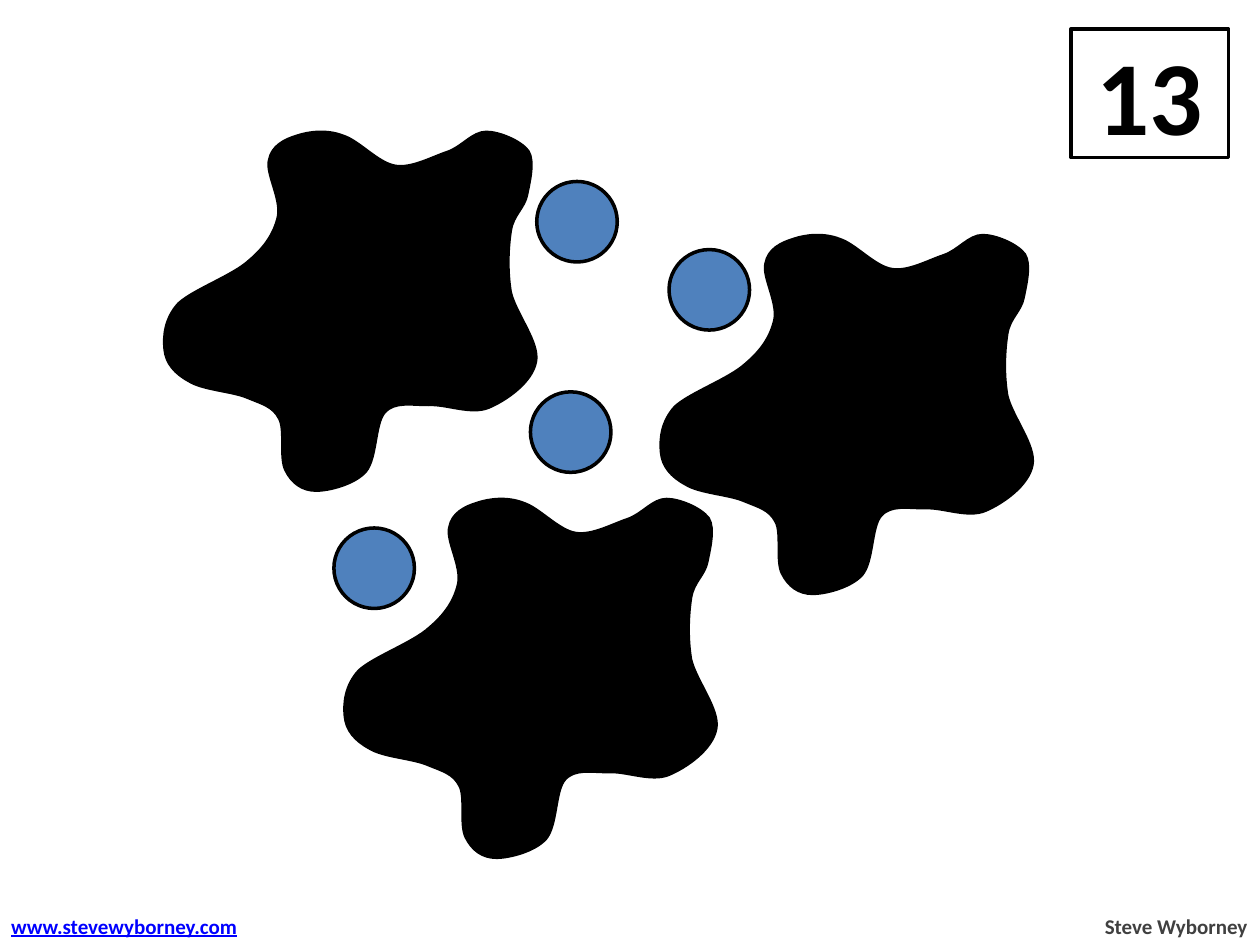
from lxml.etree import SubElement
from pptx import Presentation
from pptx.dml.color import RGBColor
from pptx.enum.shapes import MSO_SHAPE as SHAPE
from pptx.enum.text import MSO_ANCHOR as ANCHOR, MSO_AUTO_SIZE as AUTO, PP_ALIGN as ALIGN
from pptx.oxml.ns import qn
from pptx.util import Pt

NUMBER = "13"
AUTHOR = "Steve Wyborney"
SITE = "www.stevewyborney.com"

DOT_SIZE = 46
DOTS = [(382.3, 142.6), (306.7, 103.7), (303.1, 223.9), (190.8, 301.7)]

BLOBS = [(93.6, 75.6), (196.6, 285.4), (377.3, 134.6)]
BLOB_UNIT = Pt(0.72)
BLOB_START = (20, 197)
BLOB_CURVES = [
    ((9, 191), (2, 183), (1, 172)),
    ((0, 162), (1, 148), (12, 136)),
    ((24, 125), (55, 114), (68, 102)),
    ((81, 91), (88, 80), (91, 67)),
    ((94, 53), (81, 32), (84, 22)),
    ((86, 11), (96, 6), (106, 3)),
    ((115, 0), (129, -2), (142, 3)),
    ((155, 7), (170, 25), (184, 27)),
    ((197, 29), (213, 20), (225, 16)),
    ((237, 12), (245, 0), (256, 0)),
    ((266, 0), (283, 7), (289, 15)),
    ((294, 23), (290, 39), (288, 49)),
    ((286, 60), (277, 65), (275, 78)),
    ((273, 91), (272, 109), (275, 127)),
    ((279, 144), (298, 167), (295, 182)),
    ((292, 198), (272, 212), (258, 218)),
    ((244, 224), (224, 215), (210, 216)),
    ((196, 216), (183, 213), (175, 222)),
    ((167, 231), (169, 258), (160, 269)),
    ((151, 279), (131, 284), (121, 284)),
    ((110, 284), (102, 278), (97, 268)),
    ((92, 258), (97, 236), (92, 227)),
    ((87, 217), (78, 215), (66, 210)),
    ((54, 205), (31, 204), (20, 197)),
]


def color(value):
    return RGBColor.from_string(value)


def paint(sp, fill):
    sp.shadow.inherit = False
    sp.fill.solid()
    sp.fill.fore_color.rgb = color(fill)
    sp.line.color.rgb = color("000000")
    sp.line.width = Pt(2)


def write(sp, text, *, size, ink, align=ALIGN.LEFT, underline=None):
    p = sp.text_frame.paragraphs[0]
    p.alignment = align
    r = p.add_run()
    r.text = text
    r.font.name = "Calibri"
    r.font.size = Pt(size)
    r.font.bold = True
    r.font.underline = underline
    r.font.color.rgb = color(ink)


def add_label(s, text, left, width, **style):
    sp = s.shapes.add_textbox(Pt(left), Pt(518.2), Pt(width), Pt(21.8))
    sp.text_frame.word_wrap = False
    sp.text_frame.auto_size = AUTO.SHAPE_TO_FIT_TEXT
    write(sp, text, size=12, **style)


def turn(point):
    x, y = point
    return -y, x


def curve_outline(sp):
    outline = sp._element.find(".//" + qn("a:path"))
    lines = outline.findall(qn("a:lnTo"))
    for i in range(0, len(lines), 3):
        curve = SubElement(outline, qn("a:cubicBezTo"))
        lines[i].addprevious(curve)
        for line in lines[i:i + 3]:
            curve.append(line[0])
            outline.remove(line)


def add_blob(s, left, top):
    points = [point for curve in BLOB_CURVES for point in curve]
    builder = s.shapes.build_freeform(*turn(BLOB_START), scale=BLOB_UNIT)
    builder.add_line_segments([turn(point) for point in points], close=True)
    sp = builder.convert_to_shape()
    curve_outline(sp)
    xs, ys = zip(*points)
    center_x = Pt(left) + (min(xs) + max(xs)) * BLOB_UNIT // 2
    center_y = Pt(top) + (min(ys) + max(ys)) * BLOB_UNIT // 2
    sp.left = center_x - sp.width // 2
    sp.top = center_y - sp.height // 2
    sp.rotation = 270
    paint(sp, "000000")


def main():
    prs = Presentation()
    prs.slide_width, prs.slide_height = Pt(720), Pt(540)
    s = prs.slides.add_slide(prs.slide_layouts[6])

    box = s.shapes.add_shape(SHAPE.RECTANGLE, Pt(612), Pt(16.5), Pt(90), Pt(73.5))
    paint(box, "FFFFFF")
    box.text_frame.vertical_anchor = ANCHOR.MIDDLE
    write(box, NUMBER, size=60, ink="000000", align=ALIGN.CENTER)

    add_label(s, AUTHOR, 623.5, 96.5, ink="404040", align=ALIGN.RIGHT)
    add_label(s, SITE, -0.7, 147.6, ink="0000FF", underline=True)

    for left, top in DOTS:
        dot = s.shapes.add_shape(SHAPE.OVAL, Pt(left), Pt(top), Pt(DOT_SIZE), Pt(DOT_SIZE))
        paint(dot, "4F81BD")
    for left, top in BLOBS:
        add_blob(s, left, top)

    prs.save("out.pptx")


if __name__ == "__main__":
    main()
